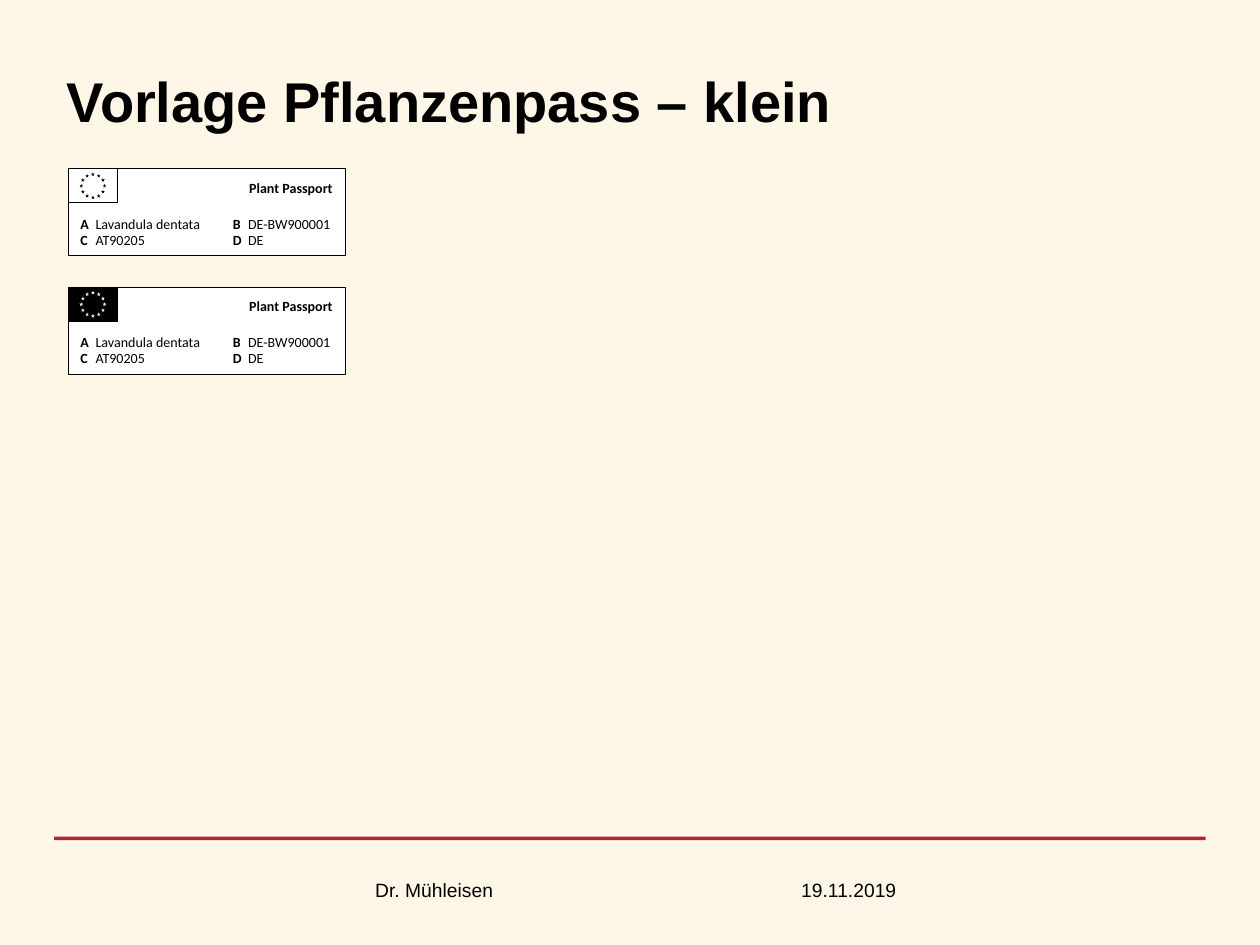
from math import cos, pi, sin

from lxml.etree import SubElement
from pptx import Presentation
from pptx.dml.color import RGBColor
from pptx.enum.shapes import MSO_SHAPE as SHAPE
from pptx.enum.text import MSO_ANCHOR as ANCHOR, PP_ALIGN as ALIGN
from pptx.oxml.ns import qn
from pptx.util import Inches, Pt

CREAM = RGBColor(0xFE, 0xF7, 0xE7)
RED = RGBColor(0xAF, 0x27, 0x2F)
BLACK = RGBColor(0, 0, 0)
WHITE = RGBColor(0xFF, 0xFF, 0xFF)

CELL = 0.1  # grid of 100 columns by 75 rows, in inches
COLS, ROWS = 100, 75
STAR = 0.3
RING = 0.92
FIELDS = [("A", "Lavandula dentata"), ("B", "DE-BW900001"),
          ("C", "AT90205"), ("D", "DE")]
FIELD_COLS = [(0, 0.53), (0.55, 0.45)]
FIELD_ROWS = [0.46, 0.65]


def emu(box):
    """Turn grid units into slide lengths."""
    return [Inches(v * CELL) for v in box]


def part(box, x, y, w, h):
    """Return the part of a box given by shares of its size."""
    left, top, width, height = box
    return left + x * width, top + y * height, w * width, h * height


def add_shape(shapes, kind, box, fill, line=None):
    sp = shapes.add_shape(kind, *emu(box))
    sp.shadow.inherit = False
    sp.fill.solid()
    sp.fill.fore_color.rgb = fill
    if line is None:
        sp.line.fill.background()
    else:
        sp.line.color.rgb = line
        sp.line.width = Pt(0.5)


def write(p, text, size=8, name="Calibri", bold=False):
    r = p.add_run()
    r.text = text
    r.font.size = Pt(size)
    r.font.name = name
    r.font.bold = bold
    r.font.color.rgb = BLACK


def add_text(shapes, box, align=ALIGN.LEFT):
    """Add an empty wrapping text box and return its paragraph."""
    tf = shapes.add_textbox(*emu(box)).text_frame
    tf.word_wrap = True
    p = tf.paragraphs[0]
    p.alignment = align
    return p


def add_flag(shapes, box, ground, star):
    add_shape(shapes, SHAPE.RECTANGLE, box, ground, BLACK)
    cx, cy, _, _ = part(box, 0.5, 0.5, 0, 0)
    for i in range(12):
        angle = i * pi / 6
        x = cx + RING * sin(angle) - STAR / 2
        y = cy - RING * cos(angle) - STAR / 2
        add_shape(shapes, SHAPE.STAR_5_POINT, (x, y, STAR, STAR), star)


def add_field(shapes, box, letter, value):
    """Add a bold letter and its value, set apart by a tab stop."""
    p = add_text(shapes, box)
    tabs = SubElement(p._p.get_or_add_pPr(), qn("a:tabLst"))
    SubElement(tabs, qn("a:tab"), pos=str(Inches(0.12)), algn="l")
    write(p, letter + "\t", bold=True)
    write(p, value)


def add_passport(shapes, box, ground, star):
    add_shape(shapes, SHAPE.RECTANGLE, box, WHITE, BLACK)
    heading = add_text(shapes, part(box, 0.47, 0.05, 0.53, 0.35), ALIGN.RIGHT)
    write(heading, "Plant Passport", bold=True)
    add_flag(shapes, part(box, 0, 0, 0.18, 0.39), ground, star)
    for i, (letter, value) in enumerate(FIELDS):
        x, w = FIELD_COLS[i % 2]
        add_field(shapes, part(box, x, FIELD_ROWS[i // 2], w, 0.35),
                  letter, value)


def add_title(s, box):
    title = s.shapes.title
    title.left, title.top, title.width, title.height = emu(box)
    tf = title.text_frame
    tf.vertical_anchor = ANCHOR.TOP
    tf.margin_top = Inches(0.1)
    p = tf.paragraphs[0]
    p.alignment = ALIGN.LEFT
    write(p, "Vorlage Pflanzenpass – klein", size=32, name="Arial", bold=True)


def add_footer(s, box):
    add_shape(s.shapes, SHAPE.RECTANGLE, part(box, 0, 0, 1, 0.05), RED)
    for x, text in [(0.16, "Dr. Mühleisen"), (0.52, "19.11.2019")]:
        p = add_text(s.shapes, part(box, x, 0.5, 0.34, 0.5), ALIGN.CENTER)
        write(p, text, size=11, name="Arial")


def main():
    prs = Presentation()
    prs.slide_width, prs.slide_height = emu((COLS, ROWS))
    s = prs.slides.add_slide(prs.slide_layouts[5])
    s.background.fill.solid()
    s.background.fill.fore_color.rgb = CREAM
    add_title(s, (4.3, 4.3, 94.8, 7.7))
    add_passport(s.shapes, (5.4, 13.4, 22, 6.9), WHITE, BLACK)
    group = s.shapes.add_group_shape()
    add_passport(group.shapes, (5.4, 22.8, 22, 6.9), BLACK, WHITE)
    add_footer(s, (4.3, 66.4, 91.4, 5.7))
    prs.save("out.pptx")


if __name__ == "__main__":
    main()
